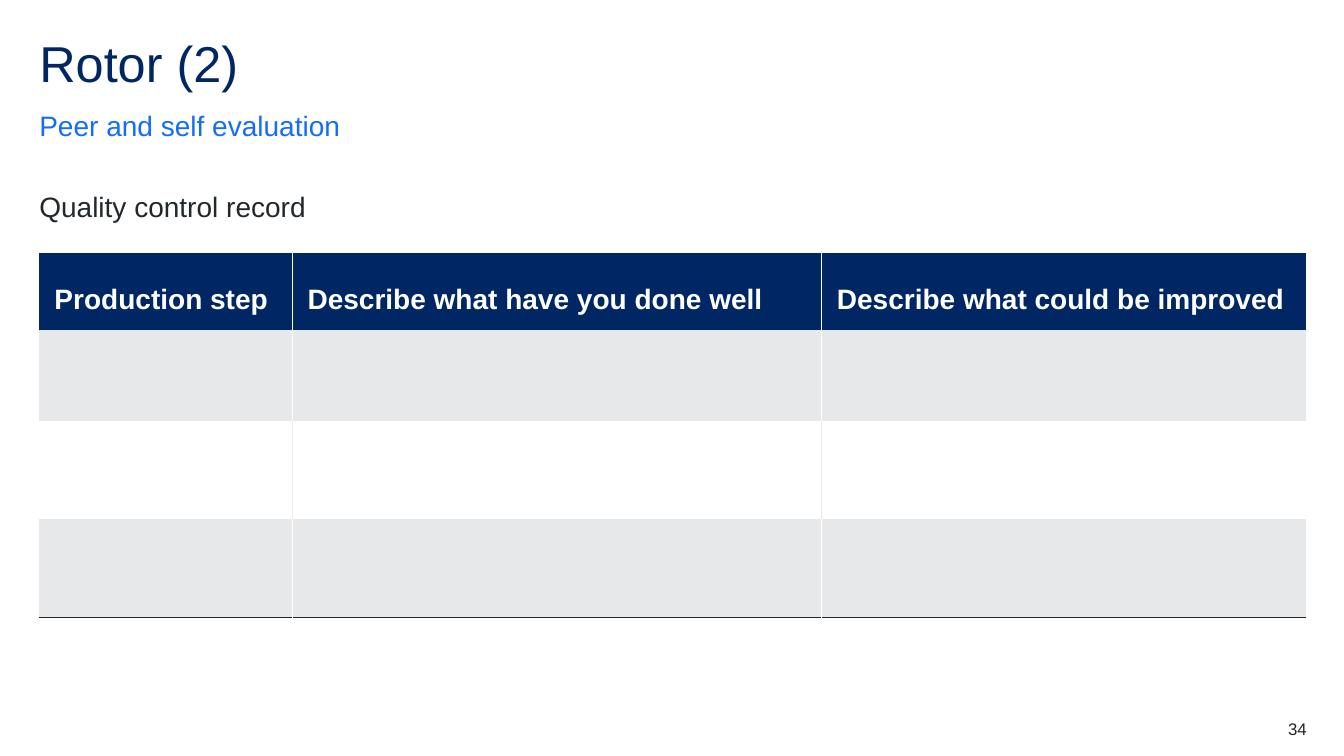
from dataclasses import dataclass

from lxml import etree
from pptx import Presentation
from pptx.dml.color import RGBColor
from pptx.enum.text import MSO_ANCHOR, MSO_AUTO_SIZE, PP_ALIGN
from pptx.oxml.ns import qn
from pptx.util import Inches, Pt

TOP, BOTTOM = MSO_ANCHOR.TOP, MSO_ANCHOR.BOTTOM
LEFT, RIGHT = PP_ALIGN.LEFT, PP_ALIGN.RIGHT
NO_TABLE_STYLE = "{2D5ABB26-0587-4C30-8999-92F81FD0307C}"
TITLE_ONLY = 5


@dataclass(frozen=True)
class Theme:
    font: str = "Arial"
    navy: str = "002664"
    blue: str = "146CFD"
    ink: str = "22272B"
    white: str = "FFFFFF"
    band: str = "E7E8EA"
    divider: str = "EBEBEB"
    title_size: int = 36
    text_size: int = 20
    number_size: int = 12


THEME = Theme()
MARGIN, CONTENT_WIDTH = 0.39, 12.56
HEADINGS = (
    "Production step",
    "Describe what have you done well",
    "Describe what could be improved",
)
COLUMN_WIDTHS = (2.51, 5.25, 4.8)
ROW_HEIGHTS = (0.76, 0.9, 0.97, 0.98)
ROW_FILLS = (THEME.navy, THEME.band, THEME.white, THEME.band)


def style_paragraph(paragraph, size, color, line_spacing=1.0, bold=False):
    paragraph.line_spacing = line_spacing
    font = paragraph.font
    font.name = THEME.font
    font.size = Pt(size)
    font.bold = bold
    font.color.rgb = RGBColor.from_string(color)


def set_text(shape, text, size, color, line_spacing=1.0, anchor=TOP, align=LEFT):
    frame = shape.text_frame
    frame.text = text
    frame.word_wrap = True
    frame.auto_size = MSO_AUTO_SIZE.NONE
    frame.vertical_anchor = anchor
    frame.margin_left = frame.margin_right = 0
    frame.margin_top = frame.margin_bottom = 0
    paragraph = frame.paragraphs[0]
    paragraph.alignment = align
    style_paragraph(paragraph, size, color, line_spacing)


def add_title(slide, text):
    title = slide.shapes.title
    title.left, title.top = Inches(MARGIN), Inches(0.39)
    title.width, title.height = Inches(CONTENT_WIDTH), Inches(0.6)
    set_text(title, text, THEME.title_size, THEME.navy, 0.9)


def add_text(slide, box, text, size, color, **layout):
    shape = slide.shapes.add_textbox(*map(Inches, box))
    set_text(shape, text, size, color, **layout)


def set_borders(cell, borders):
    """Draw 1 pt borders; borders maps tags in schema order to colours."""
    properties = cell._tc.get_or_add_tcPr()
    for position, (tag, color) in enumerate(borders.items()):
        line = etree.Element(qn(tag), w=str(Pt(1)))
        fill = etree.SubElement(line, qn("a:solidFill"))
        etree.SubElement(fill, qn("a:srgbClr"), val=color)
        properties.insert(position, line)


def fill_heading(cell, text):
    cell.text = text
    cell.margin_left = cell.margin_right = Inches(0.15)
    cell.margin_top = cell.margin_bottom = Inches(0.15)
    paragraph = cell.text_frame.paragraphs[0]
    paragraph.space_before, paragraph.space_after = Pt(12), Pt(6)
    style_paragraph(paragraph, THEME.text_size, THEME.white, 1.5, bold=True)


def add_record_table(slide):
    last_row, last_column = len(ROW_HEIGHTS) - 1, len(COLUMN_WIDTHS) - 1
    frame = slide.shapes.add_table(
        len(ROW_HEIGHTS), len(COLUMN_WIDTHS), Inches(MARGIN), Inches(2.51),
        Inches(CONTENT_WIDTH), Inches(sum(ROW_HEIGHTS)))
    for style in frame.element.iter(qn("a:tableStyleId")):
        style.text = NO_TABLE_STYLE
    table = frame.table
    for column, width in zip(table.columns, COLUMN_WIDTHS):
        column.width = Inches(width)
    for row_index, (height, color) in enumerate(zip(ROW_HEIGHTS, ROW_FILLS)):
        table.rows[row_index].height = Inches(height)
        divider = THEME.divider if color == THEME.white else THEME.white
        for column_index in range(len(COLUMN_WIDTHS)):
            cell = table.cell(row_index, column_index)
            cell.fill.solid()
            cell.fill.fore_color.rgb = RGBColor.from_string(color)
            borders = {}
            if column_index > 0:
                borders["a:lnL"] = divider
            if column_index < last_column:
                borders["a:lnR"] = divider
            if row_index == last_row:
                borders["a:lnB"] = THEME.ink
            set_borders(cell, borders)
    for column_index, heading in enumerate(HEADINGS):
        fill_heading(table.cell(0, column_index), heading)


def main():
    presentation = Presentation()
    presentation.slide_width = Inches(13.33)
    presentation.slide_height = Inches(7.5)
    slide = presentation.slides.add_slide(presentation.slide_layouts[TITLE_ONLY])
    add_title(slide, "Rotor (2)")
    add_text(slide, (MARGIN, 1.07, CONTENT_WIDTH, 0.34), "Peer and self evaluation",
             THEME.text_size, THEME.blue, line_spacing=1.5, anchor=BOTTOM)
    add_text(slide, (MARGIN, 1.71, CONTENT_WIDTH, 0.6), "Quality control record",
             THEME.text_size, THEME.ink, line_spacing=1.5)
    add_record_table(slide)
    add_text(slide, (12.17, 7.13, 0.79, 0.2), "34",
             THEME.number_size, THEME.ink, align=RIGHT)
    presentation.save("out.pptx")


if __name__ == "__main__":
    main()
